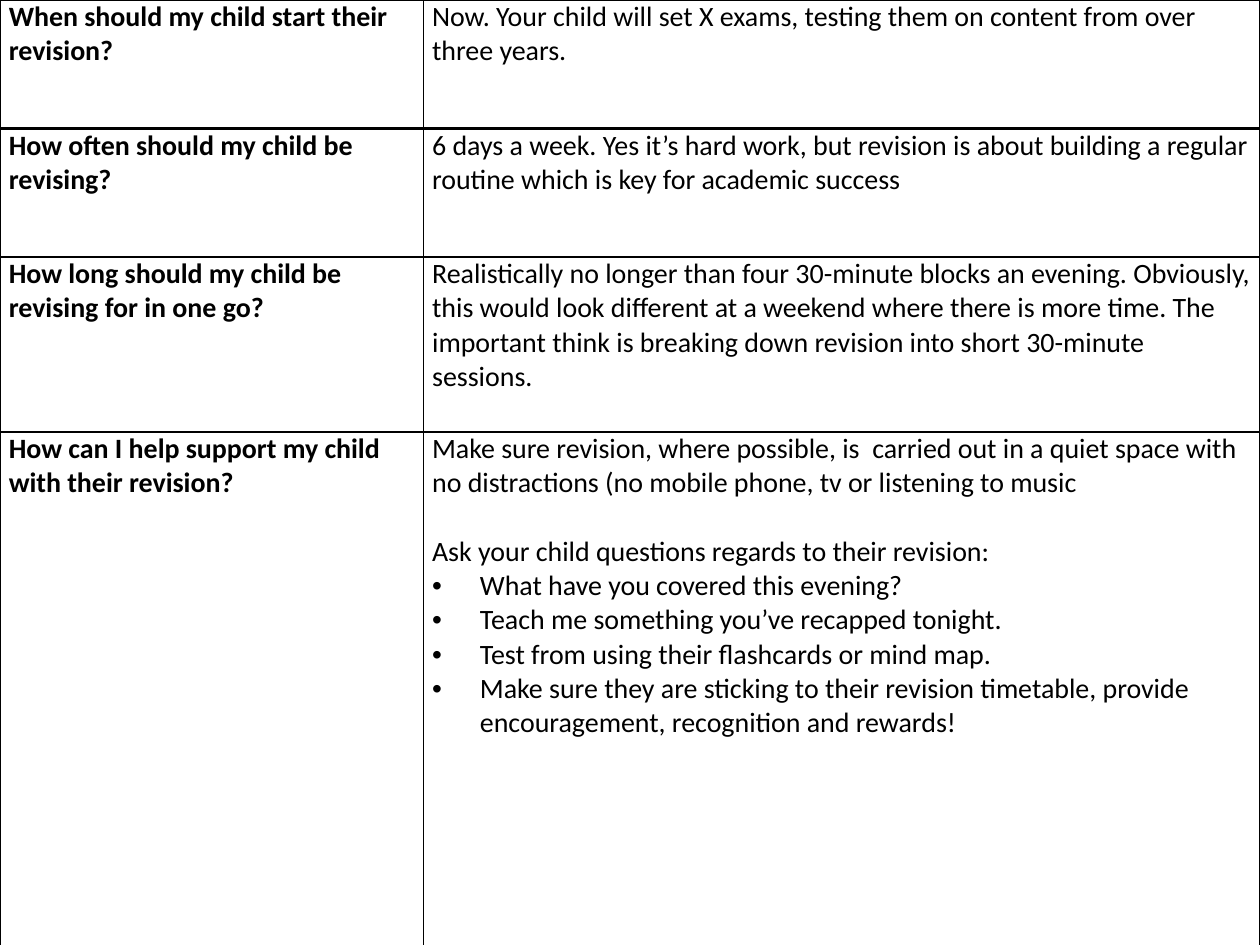
import pptx
import pptx.dml.color
import pptx.oxml
import pptx.oxml.ns
import pptx.util

COLORS = {"text": "000000", "border": "000000", "cell": "FFFFFF"}
FONT, SIZE = "Calibri", 16
LINE_HEIGHT = 19.5  # points, one line of body text
BULLET_INDENT = 0.38
THIN, HEAVY = 1, 2  # border widths in points

COLUMN_WIDTHS = [3.36, 6.64]
ROW_HEIGHTS = [1.02, 1.02, 1.39, 4.17]

# Each row: question, answer paragraphs, bullets
ROWS = [
    ("When should my child start their revision?",
     ["Now. Your child will set X exams, testing them on content from over three years."], []),
    ("How often should my child be revising?",
     ["6 days a week. Yes it’s hard work, but revision is about building a regular "
      "routine which is key for academic success"], []),
    ("How long should my child be revising for in one go?",
     ["Realistically no longer than four 30-minute blocks an evening. Obviously, this "
      "would look different at a weekend where there is more time. The important think "
      "is breaking down revision into short 30-minute sessions."], []),
    ("How can I help support my child with their revision?",
     ["Make sure revision, where possible, is  carried out in a quiet space with no "
      "distractions (no mobile phone, tv or listening to music",
      "Ask your child questions regards to their revision:"],
     ["What have you covered this evening?",
      "Teach me something you’ve recapped tonight.",
      "Test from using their flashcards or mind map.",
      "Make sure they are sticking to their revision timetable, provide encouragement, "
      "recognition and rewards!"]),
]


def rgb(name):
    return pptx.dml.color.RGBColor.from_string(COLORS[name])


def add_border(cell, side, width):
    cell._tc.get_or_add_tcPr().append(pptx.oxml.parse_xml(
        f'<a:ln{side} {pptx.oxml.ns.nsdecls("a")} w="{pptx.util.Pt(width)}">'
        f'<a:solidFill><a:srgbClr val="{COLORS["border"]}"/></a:solidFill></a:ln{side}>'))


def add_bullet(paragraph):
    properties = paragraph._p.get_or_add_pPr()
    indent = pptx.util.Inches(BULLET_INDENT)
    properties.set("marL", str(indent))
    properties.set("indent", str(-indent))
    for element in ('buFont {} typeface="Arial"', 'buChar {} char="•"'):
        properties.append(pptx.oxml.parse_xml(
            f'<a:{element.format(pptx.oxml.ns.nsdecls("a"))}/>'))


def format_cell(cell, row_index):
    cell.margin_left = cell.margin_right = pptx.util.Inches(0.07)
    cell.margin_top = cell.margin_bottom = 0
    # A heavy rule separates the first row from the rest
    top = HEAVY if row_index == 1 else THIN
    bottom = HEAVY if row_index == 0 else THIN
    for side, width in (("L", THIN), ("R", THIN), ("T", top), ("B", bottom)):
        add_border(cell, side, width)
    cell.fill.solid()
    cell.fill.fore_color.rgb = rgb("cell")


def fill_text(cell, texts, bullets=(), bold=False):
    frame = cell.text_frame
    for index, text in enumerate([*texts, *bullets]):
        paragraph = frame.add_paragraph() if index else frame.paragraphs[0]
        if index >= len(texts):
            add_bullet(paragraph)
        elif index:
            paragraph.space_before = pptx.util.Pt(LINE_HEIGHT)
        run = paragraph.add_run()
        run.text = text
        run.font.name = FONT
        run.font.size = pptx.util.Pt(SIZE)
        run.font.bold = bold
        run.font.color.rgb = rgb("text")


def add_question_table(slide):
    table = slide.shapes.add_table(
        len(ROWS), len(COLUMN_WIDTHS), 0, 0,
        pptx.util.Inches(sum(COLUMN_WIDTHS)), pptx.util.Inches(sum(ROW_HEIGHTS))).table
    table.first_row = table.horz_banding = False
    for column, width in zip(table.columns, COLUMN_WIDTHS):
        column.width = pptx.util.Inches(width)
    for row_index, (question, answers, bullets) in enumerate(ROWS):
        row = table.rows[row_index]
        row.height = pptx.util.Inches(ROW_HEIGHTS[row_index])
        for cell in row.cells:
            format_cell(cell, row_index)
        fill_text(row.cells[0], [question], bold=True)
        fill_text(row.cells[1], answers, bullets)


def main():
    presentation = pptx.Presentation()
    presentation.slide_width = pptx.util.Inches(10)
    presentation.slide_height = pptx.util.Inches(7.5)
    slide = presentation.slides.add_slide(presentation.slide_layouts[6])
    add_question_table(slide)
    presentation.save("out.pptx")


if __name__ == "__main__":
    main()
